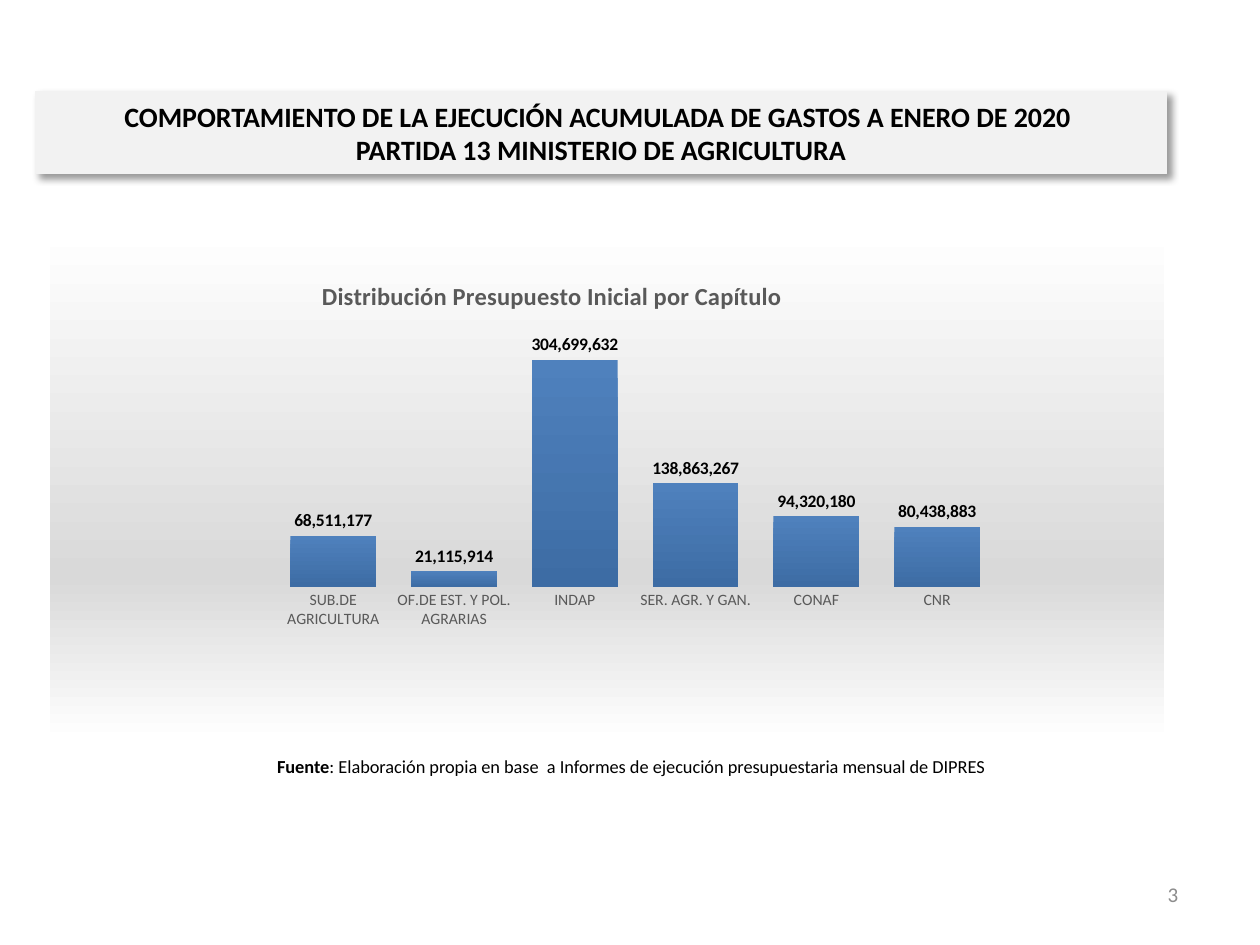
from dataclasses import dataclass

import lxml.etree
import pptx
import pptx.chart.data
import pptx.dml.color
import pptx.enum.chart
import pptx.enum.shapes
import pptx.enum.text
import pptx.oxml
import pptx.oxml.ns
import pptx.util

RGB = pptx.dml.color.RGBColor
ALIGN = pptx.enum.text.PP_ALIGN
qn = pptx.oxml.ns.qn

# Colours
BLACK = RGB(0x00, 0x00, 0x00)
WHITE = RGB(0xFF, 0xFF, 0xFF)
PANEL = RGB(0xF2, 0xF2, 0xF2)
SILVER = RGB(0xD9, 0xD9, 0xD9)
GREY = RGB(0x8C, 0x8C, 0x8C)
DARK_GREY = RGB(0x59, 0x59, 0x59)
BLUE = RGB(0x4F, 0x81, 0xBD)
DEEP_BLUE = RGB(0x3D, 0x6C, 0xA4)

WIDTH, HEIGHT = pptx.util.Inches(10), pptx.util.Inches(7.5)
FONT = "Calibri"
NUMBER_FORMAT = "#,##0"

BUDGETS = {
    "SUB.DE AGRICULTURA": 68511177,
    "OF.DE EST. Y POL. AGRARIAS": 21115914,
    "INDAP": 304699632,
    "SER. AGR. Y GAN.": 138863267,
    "CONAF": 94320180,
    "CNR": 80438883,
}


@dataclass
class Box:
    """A place given as percentages of the slide's size."""
    left: float
    top: float
    width: float
    height: float

    def emu(self) -> list[int]:
        return [int(WIDTH * self.left / 100), int(HEIGHT * self.top / 100),
                int(WIDTH * self.width / 100), int(HEIGHT * self.height / 100)]


@dataclass
class Run:
    text: str
    size: float
    color: RGB = BLACK
    bold: bool = False


def set_all(obj, **values) -> None:
    for name, value in values.items():
        setattr(obj, name, value)


def style_font(font, size: float, color: RGB, bold: bool = False) -> None:
    set_all(font, name=FONT, size=pptx.util.Pt(size), bold=bold)
    font.color.rgb = color


def write(sp, runs: list[Run], align) -> None:
    tf = sp.text_frame
    set_all(tf, word_wrap=True, vertical_anchor=pptx.enum.text.MSO_ANCHOR.MIDDLE)
    p = tf.paragraphs[0]
    p.alignment = align
    for run in runs:
        # A line break inside a run splits it between two lines
        for i, line in enumerate(run.text.split("\n")):
            if i:
                p.add_line_break()
            r = p.add_run()
            r.text = line
            style_font(r.font, run.size, run.color, run.bold)


def add_text(s, box: Box, runs: list[Run], align) -> None:
    write(s.shapes.add_textbox(*box.emu()), runs, align)


def add_banner(s, box: Box, run: Run) -> None:
    sp = s.shapes.add_shape(pptx.enum.shapes.MSO_SHAPE.RECTANGLE, *box.emu())
    sp.fill.solid()
    sp.fill.fore_color.rgb = PANEL
    sp.line.color.rgb = PANEL
    sp.line.width = pptx.util.Pt(0.75)
    sp.shadow.inherit = False
    # Soft shadow to the lower right
    effects = sp.element.spPr.find(qn("a:effectLst"))
    shadow = lxml.etree.SubElement(
        effects, qn("a:outerShdw"), blurRad=str(pptx.util.Pt(4)),
        dist=str(pptx.util.Pt(3)), dir="2700000", algn="tl", rotWithShape="0")
    color = lxml.etree.SubElement(shadow, qn("a:srgbClr"), val=str(BLACK))
    lxml.etree.SubElement(color, qn("a:alpha"), val="40000")
    write(sp, [run], ALIGN.CENTER)


def add_gradient(sp_pr, stops: dict[int, RGB]) -> None:
    """Fill from top to bottom; the keys of stops are percentages."""
    grad = lxml.etree.Element(qn("a:gradFill"), rotWithShape="1")
    sp_pr.insert(0, grad)
    gs_lst = lxml.etree.SubElement(grad, qn("a:gsLst"))
    for pos, color in stops.items():
        gs = lxml.etree.SubElement(gs_lst, qn("a:gs"), pos=str(pos * 1000))
        lxml.etree.SubElement(gs, qn("a:srgbClr"), val=str(color))
    lxml.etree.SubElement(grad, qn("a:lin"), ang="5400000", scaled="0")


def make_layout(**shares):
    """Manual layout in shares of the chart's size."""
    layout = lxml.etree.Element(qn("c:layout"))
    manual = lxml.etree.SubElement(layout, qn("c:manualLayout"))
    if "w" in shares:
        lxml.etree.SubElement(manual, qn("c:layoutTarget"), val="inner")
    for mode in ("xMode", "yMode"):
        lxml.etree.SubElement(manual, qn(f"c:{mode}"), val="edge")
    for name, value in shares.items():
        lxml.etree.SubElement(manual, qn(f"c:{name}"), val=str(value))
    return layout


def set_layout(parent, before: str, **shares) -> None:
    for old in parent.findall(qn("c:layout")):
        parent.remove(old)
    parent.find(qn(before)).addprevious(make_layout(**shares))


def add_budget_chart(s, box: Box) -> None:
    data = pptx.chart.data.CategoryChartData(number_format=NUMBER_FORMAT)
    data.categories = list(BUDGETS)
    data.add_series("Series 1", list(BUDGETS.values()))
    kind = pptx.enum.chart.XL_CHART_TYPE.COLUMN_CLUSTERED
    chart = s.shapes.add_chart(kind, *box.emu(), data).chart
    chart.has_legend = False
    style_font(chart.font, 10, BLACK)

    # Title
    p = chart.chart_title.text_frame.paragraphs[0]
    r = p.add_run()
    r.text = "Distribución Presupuesto Inicial por Capítulo"
    style_font(r.font, 14, DARK_GREY, True)
    set_layout(chart.chart_title._element, "c:overlay", x=0.24, y=0.09)

    # Axes
    cat, val = chart.category_axis, chart.value_axis
    set_all(cat, major_tick_mark=pptx.enum.chart.XL_TICK_MARK.NONE)
    cat.format.line.fill.background()
    style_font(cat.tick_labels.font, 9, DARK_GREY)
    set_all(val, visible=False, has_major_gridlines=False,
            minimum_scale=0, maximum_scale=350_000_000)

    # Columns and their values
    plot = chart.plots[0]
    set_all(plot, gap_width=41, vary_by_categories=False, has_data_labels=True)
    labels = plot.data_labels
    set_all(labels, show_value=True, number_format=NUMBER_FORMAT,
            number_format_is_linked=False,
            position=pptx.enum.chart.XL_LABEL_POSITION.OUTSIDE_END)
    style_font(labels.font, 10, BLACK, True)
    series = plot.series[0]
    series.format.line.fill.background()
    add_gradient(series._element.find(qn("c:spPr")), {0: BLUE, 100: DEEP_BLUE})

    # Plot area and background
    space = chart._chartSpace
    set_layout(space.chart.plotArea, "c:barChart",
               x=0.2, y=0.19, w=0.65, h=0.51)
    sp_pr = lxml.etree.Element(qn("c:spPr"))
    space.find(qn("c:txPr")).addprevious(sp_pr)
    add_gradient(sp_pr, {0: WHITE, 68: SILVER, 100: WHITE})
    line = lxml.etree.SubElement(sp_pr, qn("a:ln"), w=str(pptx.util.Pt(0.75)))
    fill = lxml.etree.SubElement(line, qn("a:solidFill"))
    lxml.etree.SubElement(fill, qn("a:srgbClr"), val=str(WHITE))


def main() -> None:
    prs = pptx.Presentation()
    set_all(prs, slide_width=WIDTH, slide_height=HEIGHT)
    s = prs.slides.add_slide(prs.slide_layouts[6])

    # Page number
    add_text(s, Box(71.2, 92, 23.3, 5.33), [Run("3", 12, GREY)], ALIGN.RIGHT)
    # Heading
    add_banner(s, Box(2.8, 9.73, 89.8, 8.67), Run(
        "COMPORTAMIENTO DE LA EJECUCIÓN ACUMULADA DE GASTOS A ENERO DE 2020 \n"
        "PARTIDA 13 MINISTERIO DE AGRICULTURA", 16, bold=True))
    # Source note
    add_text(s, Box(7.7, 78.4, 84.8, 5.33), [
        Run("Fuente", 10.5, bold=True),
        Run(": Elaboración propia en base  a Informes de ejecución "
            "presupuestaria mensual de DIPRES", 10.5)], ALIGN.CENTER)
    # Budget by chapter
    add_budget_chart(s, Box(3.9, 24.13, 88.6, 54.27))

    prs.save("out.pptx")


if __name__ == "__main__":
    main()
